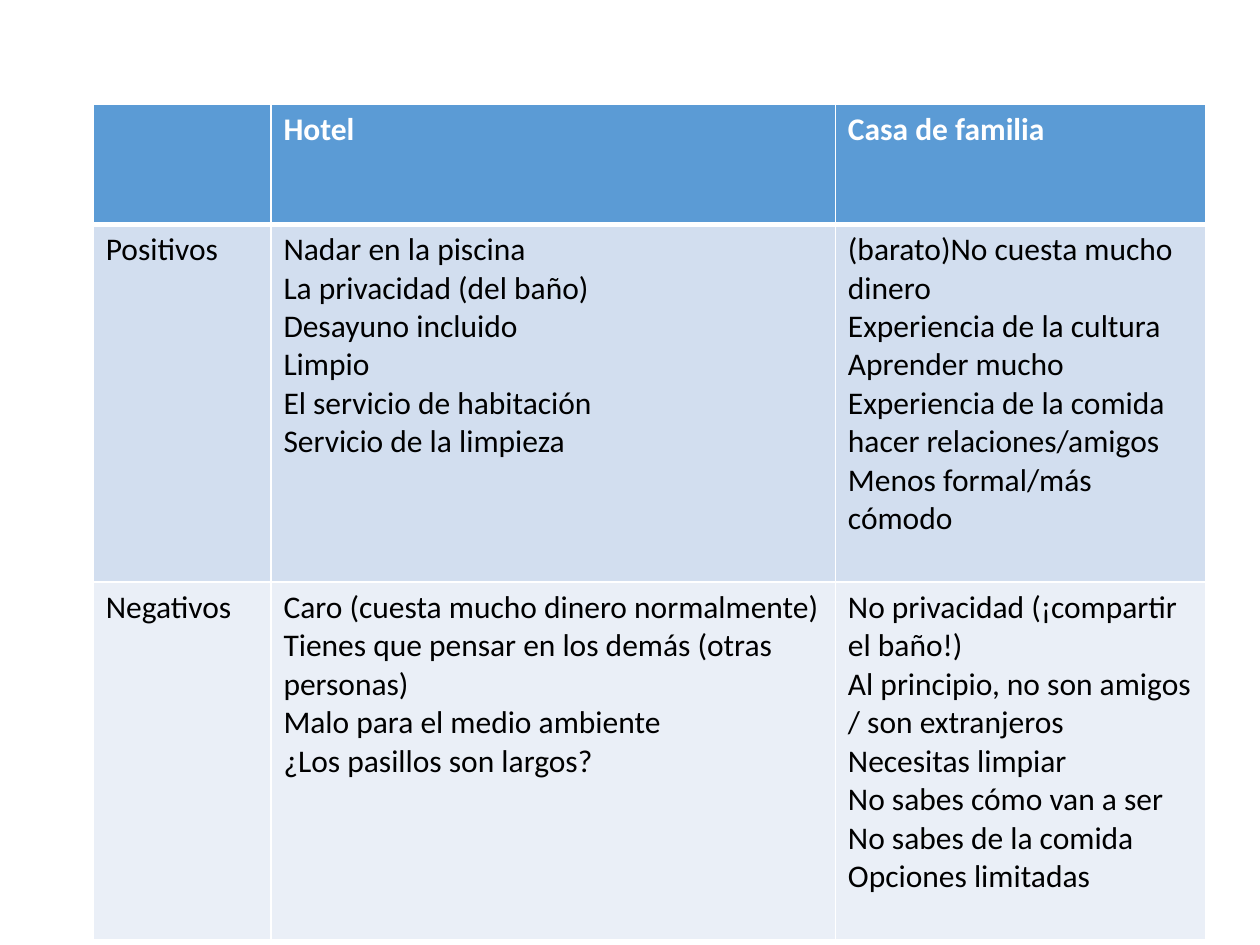
"""Build a slide comparing a hotel with a family home in one table."""
from lxml import etree
from pptx import Presentation
from pptx import util as u
from pptx.dml.color import RGBColor
from pptx.oxml import ns


def paint(color_format, value):
    color_format.rgb = RGBColor.from_string(value)


def add_border(cell, side, points):
    properties = cell._tc.get_or_add_tcPr()
    line = etree.SubElement(properties, ns.qn(f"a:ln{side}"), w=str(u.Pt(points)))
    fill = etree.SubElement(line, ns.qn("a:solidFill"))
    etree.SubElement(fill, ns.qn("a:srgbClr"), val="FFFFFF")


column_widths = [1.41, 4.48, 2.94]
row_heights = [0.95, 2.84, 2.84]
row_fills = ["5B9BD5", "D2DEEF", "EAEFF7"]
comparison = [
    [[], ["Hotel"], ["Casa de familia"]],
    [
        ["Positivos"],
        ["Nadar en la piscina", "La privacidad (del baño)", "Desayuno incluido",
         "Limpio", "El servicio de habitación", "Servicio de la limpieza"],
        ["(barato)No cuesta mucho dinero", "Experiencia de la cultura",
         "Aprender mucho", "Experiencia de la comida",
         "hacer relaciones/amigos", "Menos formal/más cómodo"],
    ],
    [
        ["Negativos"],
        ["Caro (cuesta mucho dinero normalmente)",
         "Tienes que pensar en los demás (otras personas)",
         "Malo para el medio ambiente", "¿Los pasillos son largos?"],
        ["No privacidad (¡compartir el baño!)",
         "Al principio, no son amigos / son extranjeros",
         "Necesitas limpiar", "No sabes cómo van a ser",
         "No sabes de la comida", "Opciones limitadas"],
    ],
]

deck = Presentation()
deck.slide_width, deck.slide_height = u.Inches(10), u.Inches(7.5)
slide = deck.slides.add_slide(deck.slide_layouts[6])
grid = slide.shapes.add_table(
    len(row_heights), len(column_widths), u.Inches(0.74), u.Inches(0.83),
    u.Inches(sum(column_widths)), u.Inches(sum(row_heights))).table

for column, width in zip(grid.columns, column_widths):
    column.width = u.Inches(width)

for row_index, (height, fill, entries) in enumerate(
        zip(row_heights, row_fills, comparison)):
    grid.rows[row_index].height = u.Inches(height)
    is_header = row_index == 0
    borders = {"L": 1, "R": 1, "T": 3 if row_index == 1 else 1,
               "B": 3 if is_header else 1}
    font_values = {"name": "Calibri", "size": u.Pt(18), "bold": is_header}
    for column_index, points in enumerate(entries):
        cell = grid.cell(row_index, column_index)
        for side, weight in borders.items():
            add_border(cell, side, weight)
        cell.fill.solid()
        paint(cell.fill.fore_color, fill)
        cell.text = "\n".join(points)
        for paragraph in cell.text_frame.paragraphs:
            for run in paragraph.runs:
                for attribute, value in font_values.items():
                    setattr(run.font, attribute, value)
                paint(run.font.color, "FFFFFF" if is_header else "000000")

deck.save("out.pptx")
